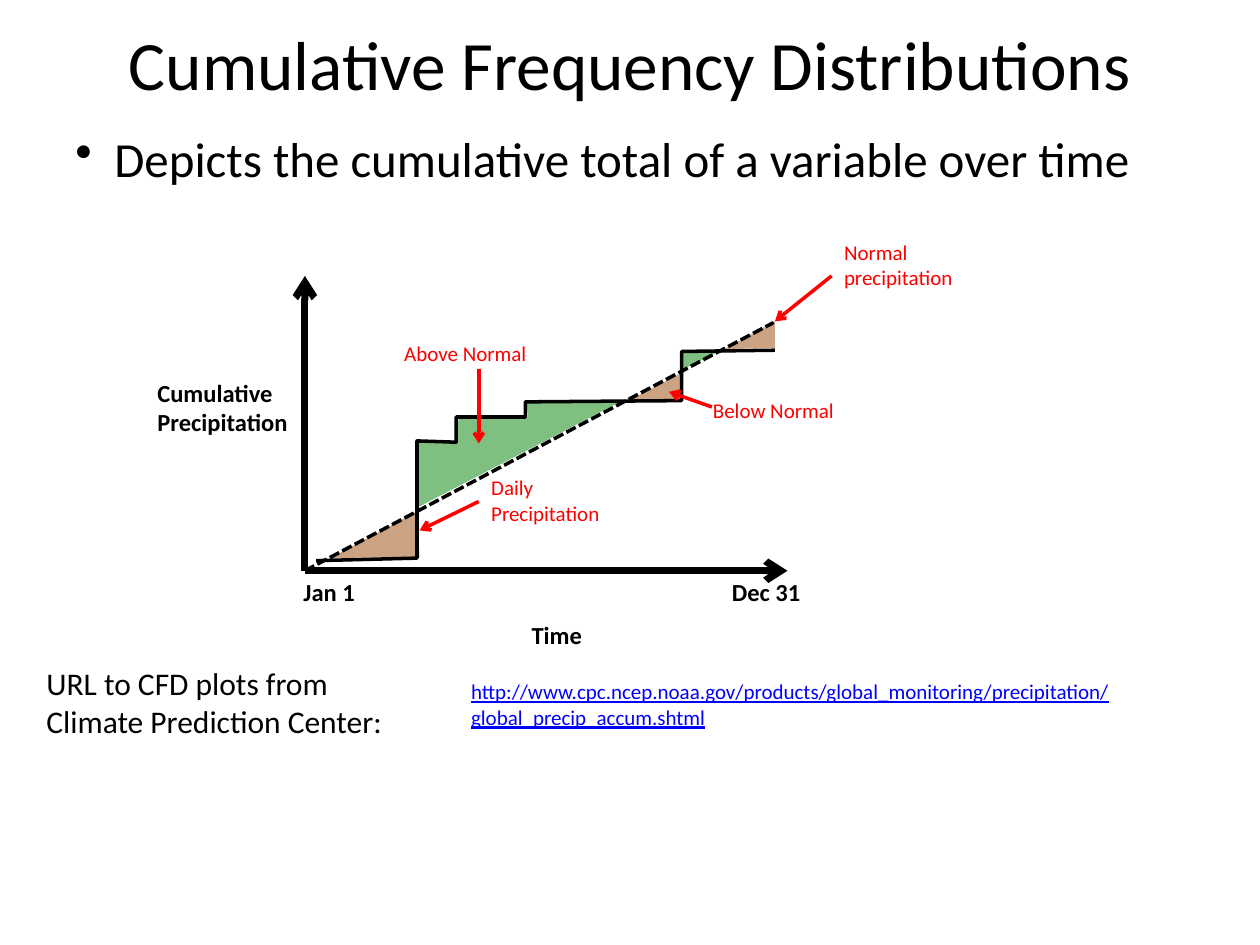
"""Build a slide that explains cumulative frequency distributions of precipitation."""
import pptx
import pptx.dml.color
import pptx.enum.dml
import pptx.enum.text
import pptx.oxml
import pptx.util
from lxml import etree

COLORS = {"ink": "000000", "note": "FF0000", "link": "0000FF", "above": "008000", "below": "984807"}
COLS, ROWS = 100, 75
FONT = "Calibri"

prs = pptx.Presentation()
prs.slide_width = pptx.util.Inches(10)
prs.slide_height = pptx.util.Inches(7.5)
col, row = prs.slide_width / COLS, prs.slide_height / ROWS
s = prs.slides.add_slide(prs.slide_layouts[5])
rgb = {name: pptx.dml.color.RGBColor.from_string(value) for name, value in COLORS.items()}


def grid(*values):
    return [round(v * (row if i % 2 else col)) for i, v in enumerate(values)]


def outline(points, close):
    corners = [grid(*point) for point in points]
    builder = s.shapes.build_freeform(*corners[0], scale=1.0)
    builder.add_line_segments(corners[1:], close=close)
    sp = builder.convert_to_shape()
    sp.shadow.inherit = False
    return sp


areas = [
    ("below", [(57.5, 27.7), (61.5, 27.6), (61.5, 25.5)]),
    ("above", [(54.2, 29.3), (54.2, 27.9), (57.1, 27.9)]),
    ("below", [(50.1, 31.7), (54.1, 31.7), (54.1, 29.6)]),
    ("above", [(33.1, 40.3), (33.2, 35), (36.2, 35.1), (36.4, 33.2), (41.9, 33.1), (41.8, 32), (49.2, 31.9)]),
    ("below", [(26.2, 44.3), (33.3, 44.2), (33.1, 40.6)]),
]
for color, points in areas:
    sp = outline(points, True)
    sp.fill.solid()
    sp.fill.fore_color.rgb = rgb[color]
    sp.line.fill.background()
    solid = sp.fill._xPr.find(pptx.oxml.ns.qn("a:solidFill"))
    etree.SubElement(solid[0], pptx.oxml.ns.qn("a:alpha"), val="50000")

title = s.shapes.title
title.left, title.top, title.width, title.height = grid(5, -1.3, 90, 12.5)
title.text_frame.text = "Cumulative Frequency Distributions"
title.text_frame.vertical_anchor = pptx.enum.text.MSO_ANCHOR.MIDDLE
p = title.text_frame.paragraphs[0]
p.alignment = pptx.enum.text.PP_ALIGN.CENTER
p.font.size, p.font.name = pptx.util.Pt(39.6), FONT
p.font.color.rgb = rgb["ink"]

steps = [(25.1, 44.5), (33.1, 44.3), (33.1, 35), (36.2, 35.1), (36.2, 33.1),
         (41.7, 33.1), (41.7, 31.9), (54.1, 31.8), (54.1, 27.9), (61.5, 27.8)]
sp = outline(steps, False)
sp.fill.background()
sp.line.color.rgb = rgb["ink"]
sp.line.width = pptx.util.Pt(2)

lines = [
    ((24.2, 45.3, 24.2, 21.9), "ink", 4, True),
    ((24.2, 45.3, 62.5, 45.3), "ink", 4, True),
    ((24.2, 45.3, 61.4, 25.6), "ink", 2, False),
    ((66, 21.9, 61.5, 25.5), "note", 2, True),
    ((56.5, 32.3, 53.1, 31.1), "note", 2, True),
    ((38, 29.3, 38, 35.2), "note", 2, True),
    ((38, 39.8, 33.3, 42.1), "note", 2, True),
]
for ends, color, width, arrow in lines:
    sp = s.shapes.add_connector(pptx.enum.shapes.MSO_CONNECTOR.STRAIGHT, *grid(*ends))
    sp.line.color.rgb = rgb[color]
    sp.line.width = pptx.util.Pt(width)
    if arrow:
        etree.SubElement(sp.line._get_or_add_ln(), pptx.oxml.ns.qn("a:tailEnd"), type="arrow")
    else:
        sp.line.dash_style = pptx.enum.dml.MSO_LINE.SQUARE_DOT
    etree.SubElement(sp._element.spPr, pptx.oxml.ns.qn("a:effectLst"))

url = "http://www.cpc.ncep.noaa.gov/products/global_monitoring/precipitation/global_precip_accum.shtml"
texts = [
    ("Depicts the cumulative total of a variable over time", (5, 9.7, 92.9, 5.7), 28, "ink", "bullet"),
    ("Cumulative\nPrecipitation", (11.5, 29.5, 12.5, 5.7), 14, "ink", "label"),
    ("Time", (41.2, 48.7, 6.1, 3.4), 14, "ink", "label"),
    ("Jan 1", (23.1, 45.3, 6.1, 3.4), 14, "ink", "label"),
    ("Dec 31", (57.1, 45.3, 7.5, 3.4), 14, "ink", "label"),
    ("Normal precipitation", (66, 18.5, 13.8, 5), 12, "note", "plain"),
    ("Below Normal", (55.6, 31.1, 13.8, 3), 12, "note", "plain"),
    ("Above Normal", (31.1, 26.5, 13.8, 3), 12, "note", "plain"),
    ("Daily Precipitation", (38, 37.2, 13.8, 5), 12, "note", "plain"),
    (url, (36.4, 53.4, 56.5, 5), 12, "link", "link"),
    ("URL to CFD plots from Climate Prediction Center:", (2.7, 52.2, 31.2, 7.1), 18, "ink", "plain"),
]
for text, box, size, color, style in texts:
    tf = s.shapes.add_textbox(*grid(*box)).text_frame
    tf.word_wrap = style != "label"
    tf.text = text
    for p in tf.paragraphs:
        p.font.name, p.font.size = FONT, pptx.util.Pt(size)
        p.font.color.rgb = rgb[color]
        p.font.bold = style == "label"
        p.font.underline = style == "link"
        if style == "bullet":
            pPr = p._p.get_or_add_pPr()
            indent = round(3.1 * col)
            pPr.set("marL", str(indent))
            pPr.set("indent", str(-indent))
            bullet = etree.Element(pptx.oxml.ns.qn("a:buChar"), char="•")
            pPr.insert(0, bullet)

prs.save("out.pptx")
